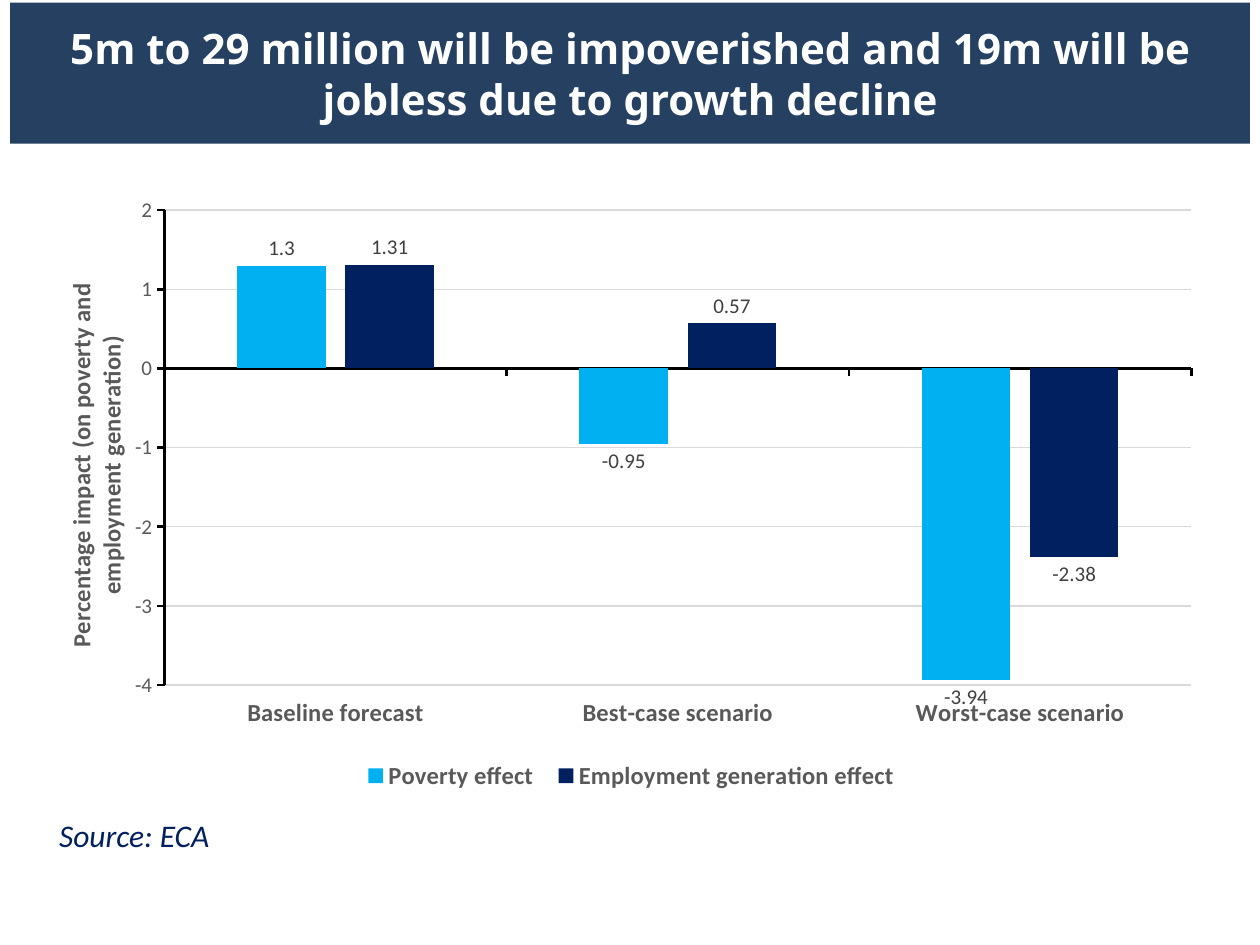
"""Build the slide on poverty and employment effects of growth decline."""
from lxml import etree
from pptx import Presentation
from pptx.chart.data import CategoryChartData
from pptx.dml.color import RGBColor
from pptx.enum.chart import (XL_CHART_TYPE, XL_LABEL_POSITION, XL_LEGEND_POSITION,
                             XL_TICK_LABEL_POSITION, XL_TICK_MARK)
from pptx.enum.text import MSO_ANCHOR, PP_ALIGN
from pptx.oxml import parse_xml
from pptx.oxml.ns import nsdecls, qn
from pptx.util import Inches, Pt

COLUMNS = XL_CHART_TYPE.COLUMN_CLUSTERED
OUTSIDE_END = XL_LABEL_POSITION.OUTSIDE_END
BOTTOM = XL_LEGEND_POSITION.BOTTOM
LOW = XL_TICK_LABEL_POSITION.LOW
TICK_OUT, TICK_NONE = XL_TICK_MARK.OUTSIDE, XL_TICK_MARK.NONE
MIDDLE, CENTER = MSO_ANCHOR.MIDDLE, PP_ALIGN.CENTER

TITLE = "5m to 29 million will be impoverished and 19m will be jobless due to growth decline"
SOURCE = "Source: ECA"
AXIS_TITLE = "Percentage impact (on poverty and employment generation)"
SCENARIOS = ["Baseline forecast", "Best-case scenario", "Worst-case scenario"]
EFFECTS = [
    ("Poverty effect", (1.3, -0.95, -3.94), "00B0F0"),
    ("Employment generation effect", (1.31, 0.57, -2.38), "002060"),
]

THEME = {
    "banner": "254061", "axis": "000000", "grid": "D9D9D9",
    "title": {"name": "Noto Sans", "size": 24, "bold": True, "italic": False, "color": "FFFFFF"},
    "source": {"name": "Calibri", "size": 18, "bold": False, "italic": True, "color": "002060"},
    "chart": {"name": "Calibri", "size": 10, "color": "000000"},
    "strong": {"name": "Calibri", "size": 14, "bold": True, "color": "595959"},
    "value": {"name": "Calibri", "size": 12, "bold": False, "color": "595959"},
    "label": {"name": "Calibri", "size": 12, "bold": False, "color": "404040"},
}
BOXES = {
    "title": (0.08, 0.02, 9.84, 1.12),
    "source": (0.37, 6.43, 4.02, 0.4),
    "chart": (0.38, 1.47, 9.26, 4.96),
}
LAYOUTS = {
    "plot": {"layoutTarget": "inner", "xMode": "edge", "yMode": "edge",
             "x": 0.1, "y": 0.04, "w": 0.88, "h": 0.76},
    "legend": {"xMode": "edge", "yMode": "edge", "x": 0.26, "y": 0.91, "w": 0.48, "h": 0.07},
    "axis title": {"xMode": "edge", "yMode": "edge", "x": 0.01, "y": 0.15},
}


def box_of(name):
    return [Inches(length) for length in BOXES[name]]


def style(font, name):
    for key, value in THEME[name].items():
        if key == "color":
            font.color.rgb = RGBColor.from_string(value)
        else:
            setattr(font, key, Pt(value) if key == "size" else value)


def draw_line(line, color, width):
    line.color.rgb = RGBColor.from_string(color)
    line.width = Pt(width)


def place(element, index, name):
    for old in element.findall(qn("c:layout")):
        element.remove(old)
    layout = parse_xml(f"<c:layout {nsdecls('c')}/>")
    manual = etree.SubElement(layout, qn("c:manualLayout"))
    for tag, value in LAYOUTS[name].items():
        etree.SubElement(manual, qn(f"c:{tag}")).set("val", str(value))
    element.insert(index, layout)


def add_title(page):
    banner = page.shapes.title
    banner.left, banner.top, banner.width, banner.height = box_of("title")
    banner._element.spPr.insert(1, parse_xml(
        f'<a:prstGeom {nsdecls("a")} prst="roundRect"><a:avLst/></a:prstGeom>'))
    banner.fill.solid()
    banner.fill.fore_color.rgb = RGBColor.from_string(THEME["banner"])
    frame = banner.text_frame
    frame.text = TITLE
    frame.word_wrap = True
    frame.vertical_anchor = MIDDLE
    for side in ("left", "top", "right", "bottom"):
        setattr(frame, f"margin_{side}", Inches(0.1))
    para = frame.paragraphs[0]
    para.alignment = CENTER
    style(para.runs[0].font, "title")


def add_source(page):
    frame = page.shapes.add_textbox(*box_of("source")).text_frame
    frame.word_wrap = True
    frame.text = SOURCE
    style(frame.paragraphs[0].runs[0].font, "source")


def format_axes(chart):
    for axis, font in ((chart.category_axis, "strong"), (chart.value_axis, "value")):
        axis.major_tick_mark, axis.minor_tick_mark = TICK_OUT, TICK_NONE
        draw_line(axis.format.line, THEME["axis"], 1.5)
        style(axis.tick_labels.font, font)
    chart.category_axis.tick_label_position = LOW
    values = chart.value_axis
    values.minimum_scale, values.maximum_scale, values.major_unit = -4, 2, 1
    values.has_major_gridlines = True
    draw_line(values.major_gridlines.format.line, THEME["grid"], 0.75)
    frame = values.axis_title.text_frame
    frame.text = AXIS_TITLE
    frame._txBody.bodyPr.set("rot", "-5400000")
    frame._txBody.bodyPr.set("vert", "horz")
    style(frame.paragraphs[0].runs[0].font, "strong")
    place(values.axis_title._element, 1, "axis title")


def add_effects_chart(page):
    data = CategoryChartData()
    data.categories = SCENARIOS
    for name, values, _ in EFFECTS:
        data.add_series(name, values)
    chart = page.shapes.add_chart(COLUMNS, *box_of("chart"), data).chart
    style(chart.font, "chart")
    chart.has_title = False
    format_axes(chart)
    chart.has_legend = True
    chart.legend.position = BOTTOM
    chart.legend.include_in_layout = False
    style(chart.legend.font, "strong")
    place(chart.legend._element, 1, "legend")
    place(chart._chartSpace.chart.plotArea, 0, "plot")
    plot = chart.plots[0]
    plot.gap_width, plot.overlap, plot.vary_by_categories = 164, -22, False
    for series, (_, _, color) in zip(plot.series, EFFECTS):
        series.invert_if_negative = False
        series.format.fill.solid()
        series.format.fill.fore_color.rgb = RGBColor.from_string(color)
        labels = series.data_labels
        labels.show_value = True
        labels.position = OUTSIDE_END
        style(labels.font, "label")


def main():
    deck = Presentation()
    deck.slide_width, deck.slide_height = Inches(10), Inches(7.5)
    page = deck.slides.add_slide(deck.slide_layouts[5])
    add_title(page)
    add_source(page)
    add_effects_chart(page)
    deck.save("out.pptx")


if __name__ == "__main__":
    main()
